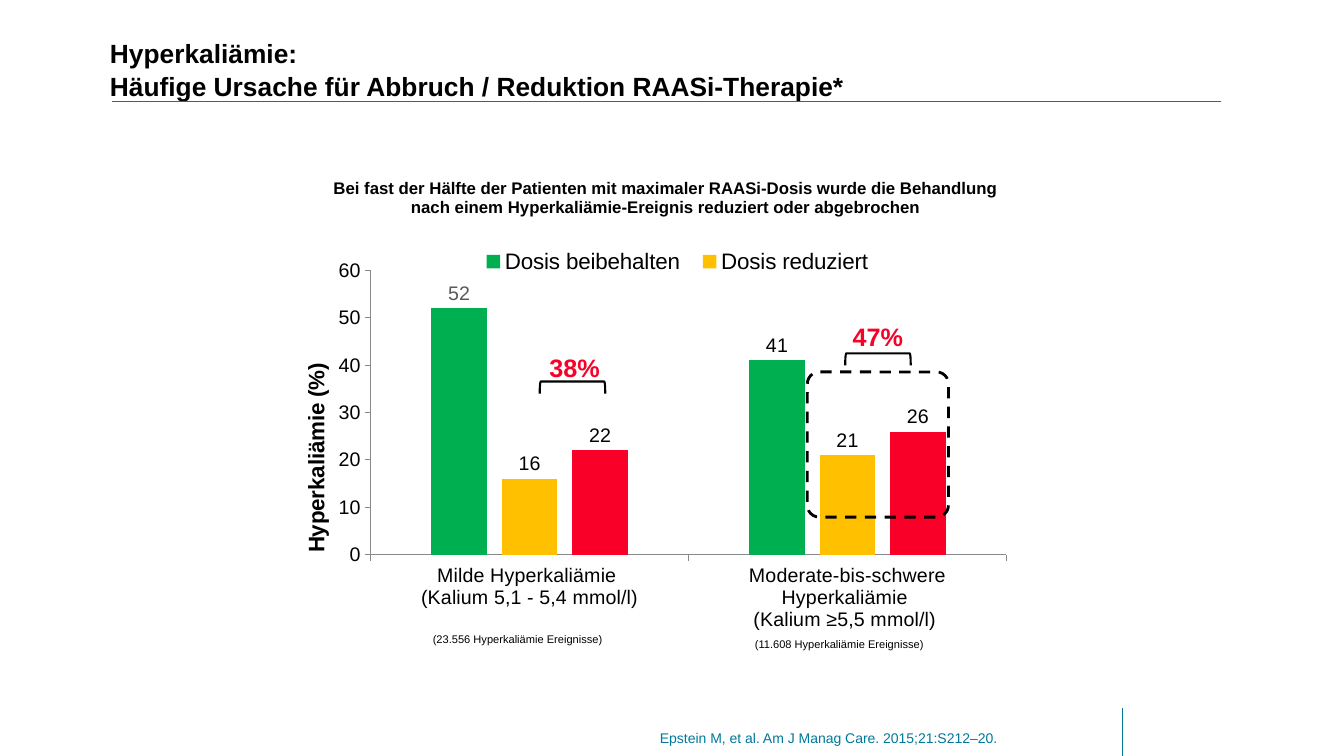
from lxml import etree
from pptx import Presentation
from pptx.chart.data import CategoryChartData
from pptx.dml.color import RGBColor
from pptx.enum import chart as c, dml, shapes, text
from pptx.oxml import ns
from pptx.util import Pt

BLACK, TEAL, RED, GREY = "000000", "00799B", "F90029", "898989"
SERIES = [
    ("Dosis beibehalten", (52, 41), "00B050"),
    ("Dosis reduziert", (16, 21), "FFC000"),
    ("Abgesetzt", (22, 26), RED),
]
CATEGORIES = [
    "Milde Hyperkaliämie \n(Kalium 5,1 - 5,4 mmol/l)",
    "Moderate-bis-schwere Hyperkaliämie \n(Kalium ≥5,5 mmol/l) ",
]


def color(value):
    """Turn a hex string into a colour."""
    return RGBColor.from_string(value)


def apply(target, **values):
    """Set each given attribute on the target."""
    for name, value in values.items():
        setattr(target, name, value)


def style_font(font, size, fill=BLACK, bold=False):
    """Format a font in Arial."""
    apply(font, name="Arial", size=Pt(size), bold=bold)
    font.color.rgb = color(fill)


def style_line(line, width, fill=BLACK):
    """Give a line its colour and width in points."""
    line.color.rgb = color(fill)
    line.width = Pt(width)


def write(shape, content, size, fill=BLACK, bold=False, align=text.PP_ALIGN.CENTER,
          spacing=1.1, insets=(5, 3), anchor=text.MSO_ANCHOR.TOP):
    """Write one formatted paragraph into a shape."""
    frame = shape.text_frame
    side, end = map(Pt, insets)
    apply(frame, word_wrap=True, auto_size=text.MSO_AUTO_SIZE.NONE, vertical_anchor=anchor,
          margin_left=side, margin_right=side, margin_top=end, margin_bottom=end)
    paragraph = frame.paragraphs[0]
    paragraph.text = content
    apply(paragraph, alignment=align, line_spacing=spacing)
    for run in paragraph.runs:
        style_font(run.font, size, fill, bold)


def add_text(slide, box, content, size, **options):
    """Add a text box."""
    write(slide.shapes.add_textbox(*map(Pt, box)), content, size, **options)


def add_title(slide, box, content):
    """Move and fill the title placeholder."""
    title = slide.shapes.title
    apply(title, **dict(zip(("left", "top", "width", "height"), map(Pt, box))))
    write(title, content, 18.8, bold=True, align=text.PP_ALIGN.LEFT, spacing=1.06,
          insets=(0, 0), anchor=text.MSO_ANCHOR.BOTTOM)


def add_rule(slide, ends, width):
    """Add a straight teal line without a shadow."""
    rule = slide.shapes.add_connector(shapes.MSO_CONNECTOR.STRAIGHT, *map(Pt, ends))
    style_line(rule.line, width, TEAL)
    etree.SubElement(rule._element.spPr, ns.qn("a:effectLst"))


def add_outline(slide, kind, box, width):
    """Add an unfilled shape with a black outline."""
    shape = slide.shapes.add_shape(kind, *map(Pt, box))
    shape.shadow.inherit = False
    shape.fill.background()
    style_line(shape.line, width)
    return shape


def add_bracket(slide, left, top):
    """Add a bracket that opens downwards."""
    bracket = add_outline(slide, shapes.MSO_SHAPE.LEFT_BRACKET, (left, top, 8.64, 46.8), 1.5)
    bracket.rotation = 90


def set_layout(element, index, **parts):
    """Place a chart part by fractions of the chart area."""
    for old in element.findall(ns.qn("c:layout")):
        element.remove(old)
    layout = etree.Element(ns.qn("c:layout"))
    manual = etree.SubElement(layout, ns.qn("c:manualLayout"))
    for tag, value in parts.items():
        etree.SubElement(manual, ns.qn(f"c:{tag}")).set("val", str(value))
    element.insert(index, layout)


def style_axis(axis):
    """Format an axis and its labels."""
    apply(axis, has_major_gridlines=False, major_tick_mark=c.XL_TICK_MARK.OUTSIDE,
          minor_tick_mark=c.XL_TICK_MARK.NONE)
    style_font(axis.tick_labels.font, 14)
    style_line(axis.format.line, 0.75, GREY)


def style_value_axis(axis):
    """Scale the value axis and give it its title."""
    apply(axis, minimum_scale=0, maximum_scale=60, major_unit=10)
    frame = axis.axis_title.text_frame
    frame.text = "Hyperkaliämie (%)"
    style_font(frame.paragraphs[0].runs[0].font, 16, bold=True)
    set_layout(axis.axis_title._element, 1, xMode="edge", yMode="edge", x=0.02, y=0.31)


def style_legend(chart):
    """Show the first two series in a legend over the plot."""
    chart.has_legend = True
    legend = chart.legend
    apply(legend, position=c.XL_LEGEND_POSITION.BOTTOM, include_in_layout=False)
    style_font(legend.font, 16)
    entry = etree.Element(ns.qn("c:legendEntry"))
    etree.SubElement(entry, ns.qn("c:idx")).set("val", "2")
    etree.SubElement(entry, ns.qn("c:delete")).set("val", "1")
    legend._element.insert(1, entry)
    set_layout(legend._element, 2, xMode="edge", yMode="edge", x=0.26, y=0.05, w=0.57, h=0.08)


def style_series(series, fill):
    """Colour a series and show its values."""
    series.format.fill.solid()
    series.format.fill.fore_color.rgb = color(fill)
    labels = series.data_labels
    apply(labels, show_value=True, position=c.XL_LABEL_POSITION.OUTSIDE_END)
    style_font(labels.font, 14)


def add_dose_chart(slide, box):
    """Add the clustered column chart."""
    data = CategoryChartData()
    data.categories = CATEGORIES
    for name, values, _ in SERIES:
        data.add_series(name, values)
    kind = c.XL_CHART_TYPE.COLUMN_CLUSTERED
    chart = slide.shapes.add_chart(kind, *map(Pt, box), data).chart
    style_font(chart.font, 14, "003C4E")
    chart.has_title = False
    plot = chart.plots[0]
    apply(plot, gap_width=219, overlap=-27, vary_by_categories=False)
    for series, (_, _, fill) in zip(plot.series, SERIES):
        style_series(series, fill)
    first_label = plot.series[0].points[0].data_label
    style_font(first_label.font, 14, "595959")
    first_label.position = c.XL_LABEL_POSITION.OUTSIDE_END
    for axis in (chart.category_axis, chart.value_axis):
        style_axis(axis)
    style_value_axis(chart.value_axis)
    style_legend(chart)
    set_layout(chart._chartSpace.chart.plotArea, 0, layoutTarget="inner", xMode="edge",
               yMode="edge", x=0.121, y=0.11, w=0.879, h=0.643)


def main():
    """Build and save the slide."""
    presentation = Presentation()
    apply(presentation, slide_width=Pt(960), slide_height=Pt(540))
    slide = presentation.slides.add_slide(presentation.slide_layouts[5])
    add_rule(slide, (872.5, 72.5, 80, 72.5), 1)
    add_rule(slide, (801.5, 540, 801.5, 506), 0.75)
    add_title(slide, (78.5, 18.7, 793.5, 54),
              "Hyperkaliämie: \vHäufige Ursache für Abbruch / Reduktion RAASi-Therapie*")
    add_dose_chart(slide, (202.3, 158.4, 517, 316))
    highlight = add_outline(slide, shapes.MSO_SHAPE.ROUNDED_RECTANGLE,
                            (576.7, 265.7, 100.8, 103.7), 2)
    highlight.adjustments[0] = 0.084
    highlight.line.dash_style = dml.MSO_LINE.DASH
    add_text(slide, (236.9, 128.9, 477.4, 34.6),
             "Bei fast der Hälfte der Patienten mit maximaler RAASi-Dosis wurde die Behandlung "
             "nach einem Hyperkaliämie-Ereignis reduziert oder abgebrochen",
             12, bold=True, spacing=0.9, insets=(0, 0))
    add_text(slide, (259.2, 447.8, 221, 15), "(23.556 Hyperkaliämie Ereignisse)", 7.9)
    add_text(slide, (489.6, 451.4, 219.6, 15), "(11.608 Hyperkaliämie Ereignisse)", 7.9)
    add_bracket(slide, 404.6, 253.4)
    add_text(slide, (380.2, 246.2, 60.5, 27.4), "38%", 18, fill=RED, bold=True)
    add_bracket(slide, 622.8, 233.3)
    add_text(slide, (604.1, 224.6, 55.4, 27.4), "47%", 18, fill=RED, bold=True,
             align=text.PP_ALIGN.LEFT)
    add_text(slide, (357.1, 516.2, 362.2, 19.4),
             "Epstein M, et al. Am J Manag Care. 2015;21:S212–20.", 10, fill=TEAL,
             align=text.PP_ALIGN.RIGHT, insets=(7.2, 3.6))
    presentation.save("out.pptx")


if __name__ == "__main__":
    main()
